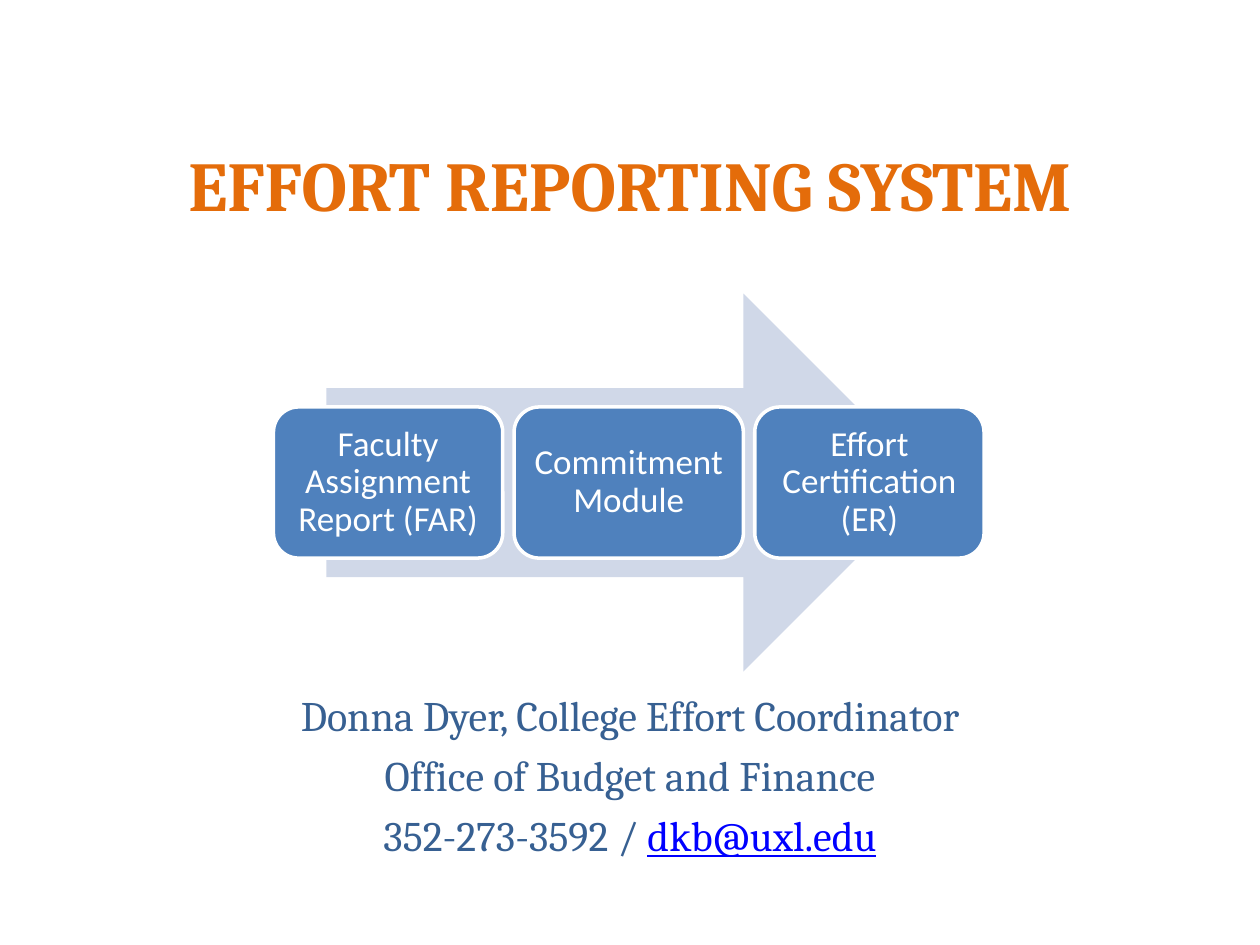
from pptx import Presentation
from pptx.dml.color import RGBColor
from pptx.enum.shapes import MSO_SHAPE
from pptx.enum.text import MSO_ANCHOR, PP_ALIGN
from pptx.util import Pt

EMU_PER_PX = 9144  # 100 px to the inch
COLORS = {
    "title": "E46C0A",
    "contact": "376092",
    "link": "0000FF",
    "arrow": "D0D8E8",
    "step": "4F81BD",
    "white": "FFFFFF",
}
TITLE = {"name": "Cambria", "size": Pt(40), "bold": True}
CONTACT = {"name": "Cambria", "size": Pt(24)}
STEP = {"name": "Calibri", "size": Pt(20)}
STEPS = ["Faculty Assignment Report (FAR)", "Commitment Module", "Effort Certification (ER)"]
CONTACT_LINES = [
    [("Donna Dyer, College Effort Coordinator", "contact", {})],
    [("Office of Budget and Finance", "contact", {})],
    [("352-273-3592 / ", "contact", {}), ("dkb@uxl.edu", "link", {"underline": True})],
]


def px(*lengths):
    return [length * EMU_PER_PX for length in lengths]


def color(name):
    return RGBColor.from_string(COLORS[name])


def add_span(para, text, color_name, font_format):
    span = para.add_run()
    span.text = text
    for name, value in font_format.items():
        setattr(span.font, name, value)
    span.font.color.rgb = color(color_name)


def add_text_box(page, box, lines, font_format, anchor, space_before=0):
    """Place centred lines; each line is a list of (text, colour, extra format)."""
    frame = page.shapes.add_textbox(*px(*box)).text_frame
    frame.word_wrap = True
    frame.vertical_anchor = anchor
    for index, spans in enumerate(lines):
        para = frame.add_paragraph() if index else frame.paragraphs[0]
        para.alignment = PP_ALIGN.CENTER
        para.space_before = Pt(space_before)
        for text, color_name, extra in spans:
            add_span(para, text, color_name, {**font_format, **extra})


def add_filled_shape(page, kind, box, fill):
    shape = page.shapes.add_shape(kind, *px(*box))
    shape.shadow.inherit = False
    shape.fill.solid()
    shape.fill.fore_color.rgb = color(fill)
    shape.line.fill.background()
    return shape


def add_step(page, box, label):
    step = add_filled_shape(page, MSO_SHAPE.ROUNDED_RECTANGLE, box, "step")
    step.line.color.rgb = color("white")
    step.line.width = Pt(2)
    frame = step.text_frame
    frame.word_wrap = True
    frame.vertical_anchor = MSO_ANCHOR.MIDDLE
    for side in ("left", "top", "right", "bottom"):
        setattr(frame, f"margin_{side}", px(8)[0])
    para = frame.paragraphs[0]
    para.alignment = PP_ALIGN.CENTER
    para.line_spacing = 0.9
    add_span(para, label, "white", STEP)


def add_process(page, box):
    """Lay equal steps across the box, over an arrow of the box's full height."""
    left, top, width, height = box
    inset, gap, step_height = 42, 9, 120
    arrow_box = (left + inset, top, width - 2 * inset, height)
    add_filled_shape(page, MSO_SHAPE.RIGHT_ARROW, arrow_box, "arrow")
    step_width = (width - gap * (len(STEPS) - 1)) // len(STEPS)
    step_top = top + (height - step_height) // 2
    for index, label in enumerate(STEPS):
        step_left = left + index * (step_width + gap)
        add_step(page, (step_left, step_top, step_width, step_height), label)


def main():
    deck = Presentation()
    deck.slide_width, deck.slide_height = px(1000, 750)
    page = deck.slides.add_slide(deck.slide_layouts[6])
    title = [[("EFFORT REPORTING SYSTEM", "title", {})]]
    add_text_box(page, (75, 33, 850, 225), title, TITLE, MSO_ANCHOR.MIDDLE)
    add_text_box(page, (150, 542, 700, 183), CONTACT_LINES, CONTACT, MSO_ANCHOR.TOP, 5.6)
    add_process(page, (217, 233, 565, 300))
    deck.save("out.pptx")


if __name__ == "__main__":
    main()
